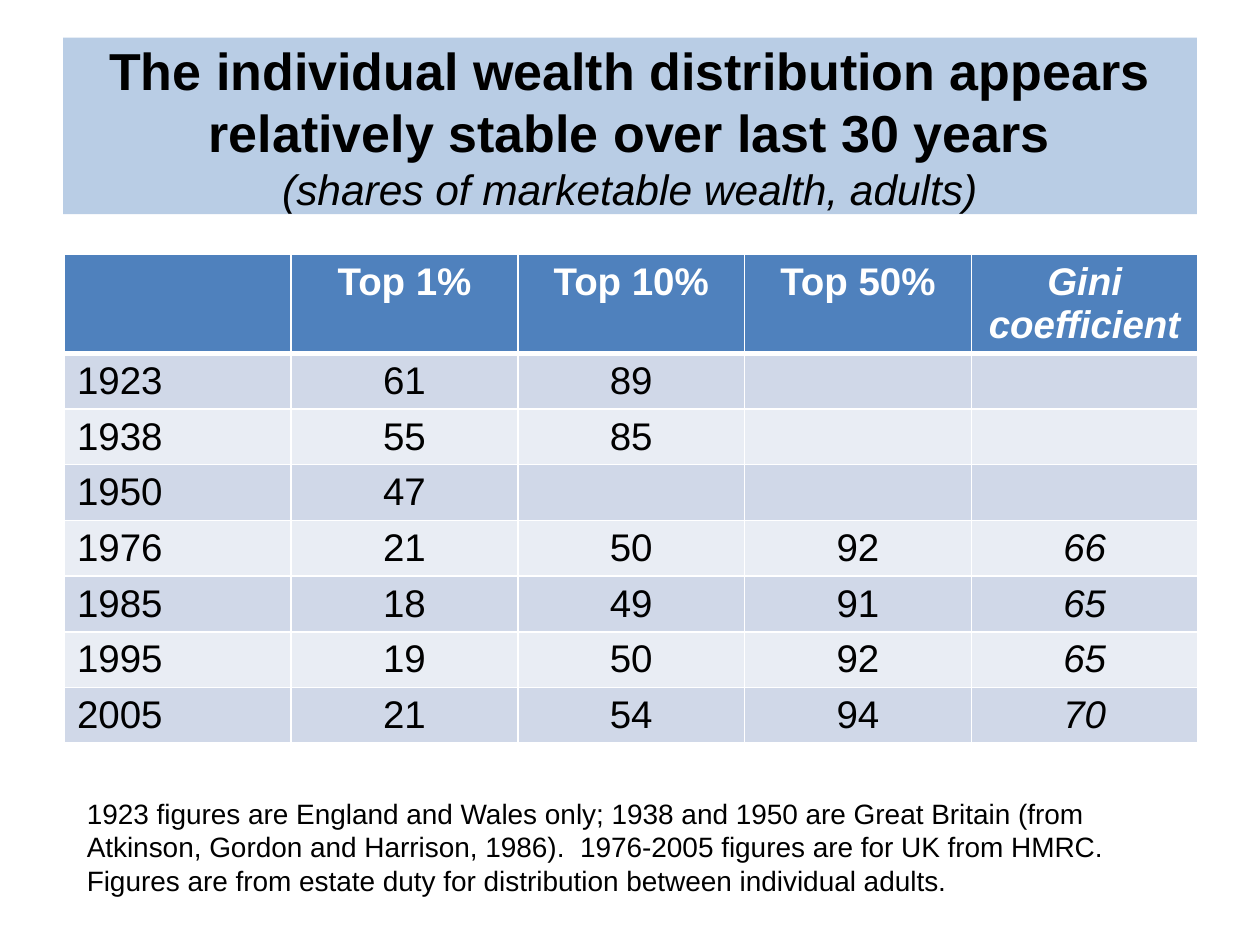
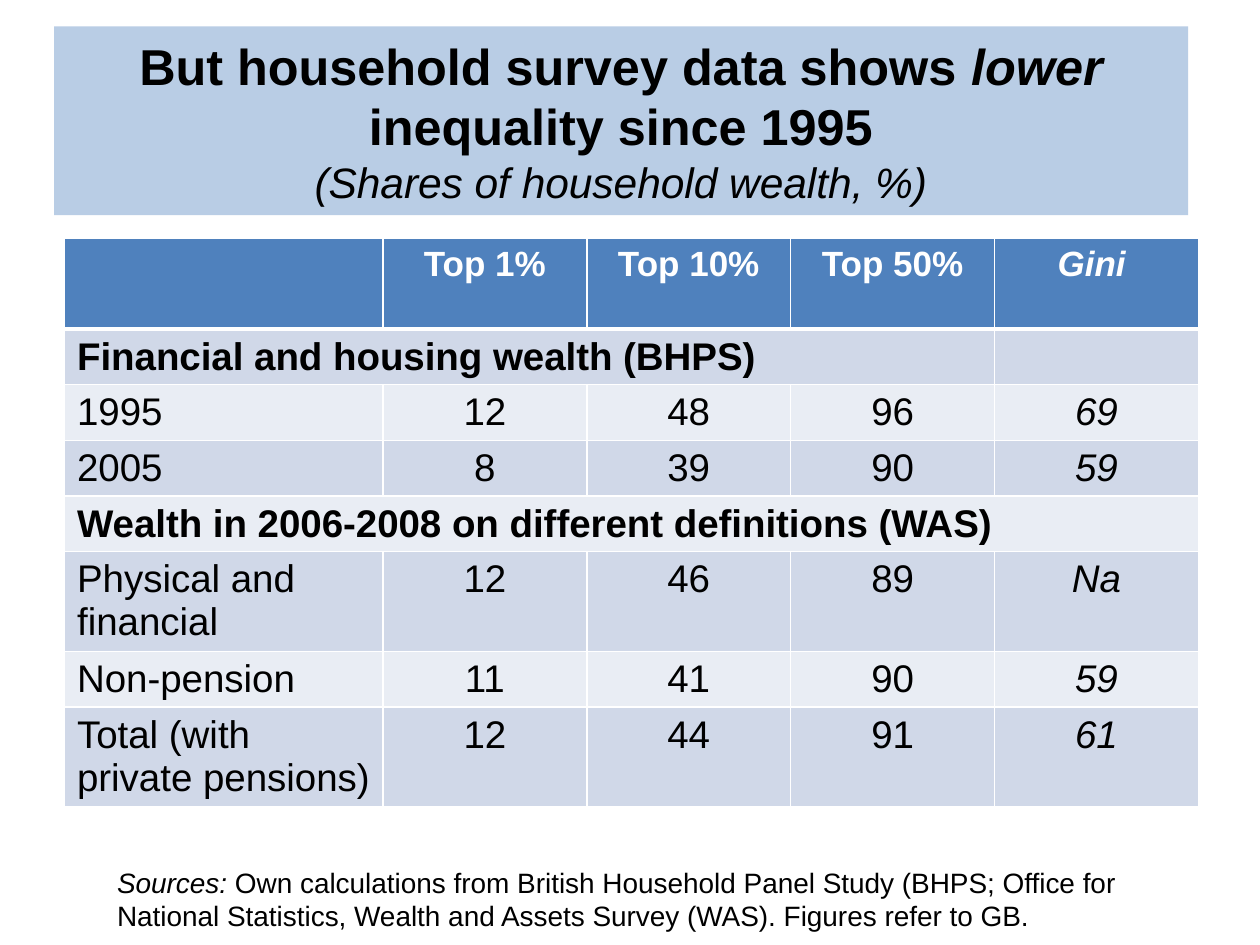
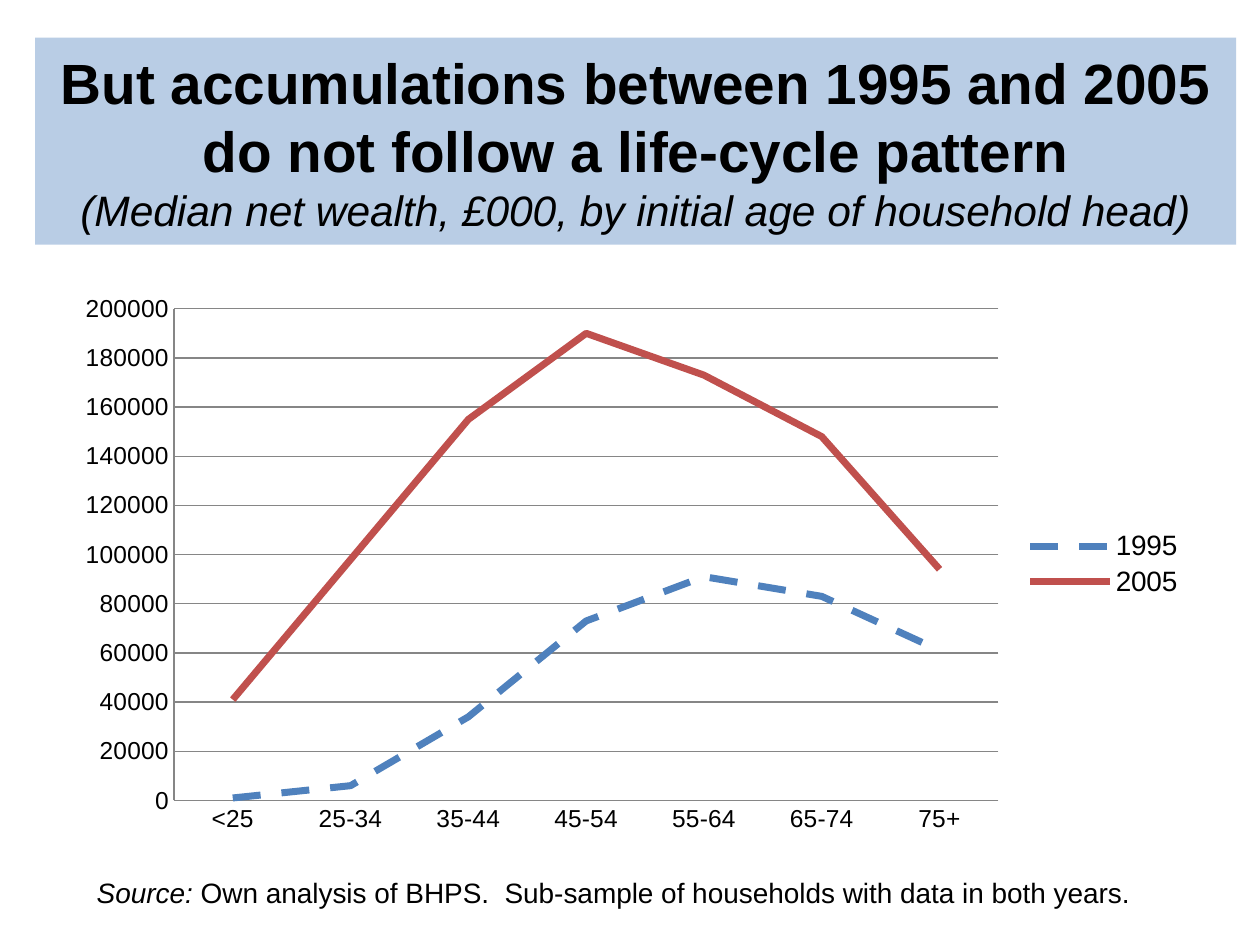
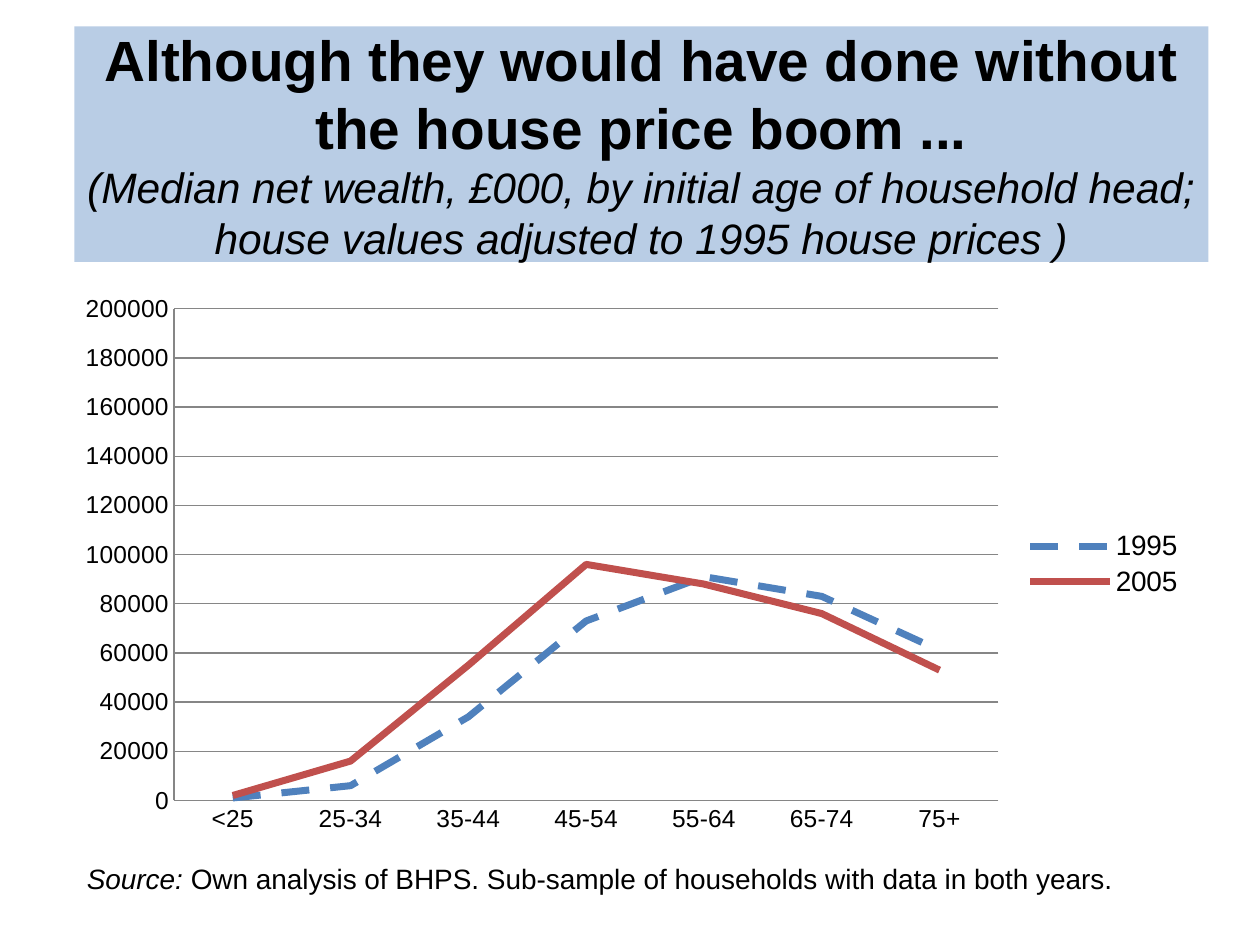
import pptx
import pptx.chart.data
import pptx.dml.color
import pptx.enum.chart
import pptx.enum.dml
import pptx.enum.text
import pptx.oxml
import pptx.oxml.ns
import pptx.util

Cm = pptx.util.Cm
Pt = pptx.util.Pt
Align = pptx.enum.text.PP_ALIGN

FONT = "Arial"
COLORS = {"text": "000000", "white": "FFFFFF", "title band": "B9CDE5",
          "header": "4F81BD", "odd row": "D0D8E8", "even row": "E9EDF4",
          "grid": "868686", "1995": "4F81BD", "2005": "C0504D"}
SUBTITLE = {"size": 24.3, "bold": False, "italic": True}
ITALIC = {"italic": True}

AGES = ["<25", "25-34", "35-44", "45-54", "55-64", "65-74", "75+"]
WEALTH_1995 = [1000, 6000, 34000, 73000, 91000, 83000, 61000]
CHART_BOX = (1.27, 5.72, 22.86, 11.3)

# Boxes are left, top, width, height in centimetres; runs are text or (text, format).
SLIDES = [
    {"title": ["The individual wealth distribution appears relatively stable over last 30 years\n",
               ("(shares of marketable wealth, adults)", SUBTITLE)],
     "title box": (1.27, 0.76, 22.86, 3.56), "title size": 29.7,
     "table": {
         "place": (1.3, 5.13), "header size": 22,
         "columns": [4.57] * 5, "rows": [1.97] + [1.12] * 7,
         "cells": [["", "Top 1%", "Top 10%", "Top 50%", "Gini coefficient"],
                   ["1923", "61", "89", "", ""],
                   ["1938", "55", "85", "", ""],
                   ["1950", "47", "", "", ""],
                   ["1976", "21", "50", "92", "66"],
                   ["1985", "18", "49", "91", "65"],
                   ["1995", "19", "50", "92", "65"],
                   ["2005", "21", "54", "94", "70"]],
         "spans": {}},
     "note": ["1923 figures are England and Wales only; 1938 and 1950 are Great Britain "
              "(from Atkinson, Gordon and Harrison, 1986).  1976-2005 figures are for UK "
              "from HMRC.  Figures are from estate duty for distribution between "
              "individual adults."],
     "note box": (1.5, 15.93, 21.41, 2.31)},
    {"title": ["But household survey data shows ", ("lower", ITALIC),
               " inequality since 1995\n", ("(Shares of household wealth, %)", SUBTITLE)],
     "title box": (1.09, 0.53, 22.86, 3.81), "title size": 28.8,
     "table": {
         "place": (1.3, 4.8), "header size": 20,
         "columns": [6.42] + [4.11] * 4,
         "rows": [1.83, 1.12, 1.12, 1.12, 1.12, 2.01, 1.12, 2.01],
         "cells": [["", "Top 1%", "Top 10%", "Top 50%", "Gini "],
                   ["Financial and housing wealth (BHPS)", "", "", "", ""],
                   ["1995", "12", "48", "96", "69"],
                   ["2005", "8", "39", "90", "59"],
                   ["Wealth in 2006-2008 on different definitions (WAS)", "", "", "", ""],
                   ["Physical and financial", "12", "46", "89", "Na"],
                   ["Non-pension", "11", "41", "90", "59"],
                   ["Total (with private pensions)", "12", "44", "91", "61"]],
         "spans": {1: 4, 4: 5}},
     "note": [("Sources: ", ITALIC),
              "Own calculations from British Household Panel Study (BHPS; Office for National "
              "Statistics, Wealth and Assets Survey (WAS). Figures refer to GB."],
     "note box": (2.11, 17.32, 20.8, 1.63)},
    {"title": ["But accumulations between 1995 and 2005 do not follow a life-cycle pattern\n",
               ("(Median net wealth, £000, by initial age of household head)", SUBTITLE)],
     "title box": (0.71, 0.76, 24.21, 4.17), "title size": 32.4,
     "chart": {"1995": WEALTH_1995,
               "2005": [41000, 98000, 155000, 190000, 173000, 148000, 94000]},
     "note": [("Source: ", ITALIC),
              "Own analysis of BHPS.  Sub-sample of households with data in both years."],
     "note box": (1.7, 17.53, 21.79, 0.94)},
    {"title": ["Although they would have done without the house price boom ...\n",
               ("(Median net wealth, £000, by initial age of household head; "
                "house values adjusted to 1995 house prices )", SUBTITLE)],
     "title box": (1.5, 0.53, 22.86, 4.75), "title size": 32.4,
     "chart": {"1995": WEALTH_1995,
               "2005": [2000, 16000, 55000, 96000, 88000, 76000, 53000]},
     "note": [("Source: ", ITALIC),
              "Own analysis of BHPS. Sub-sample of households with data in both years."],
     "note box": (1.5, 17.25, 22.4, 0.94)},
]


def rgb(name):
    return pptx.dml.color.RGBColor.from_string(COLORS[name])


def box(lengths):
    return [Cm(length) for length in lengths]


def set_font(font, size, color="text", bold=False, italic=False):
    font.name = FONT
    font.size = Pt(size)
    font.bold = bold
    font.italic = italic
    font.color.rgb = rgb(color)


def write(frame, runs, align=Align.LEFT, **style):
    """Fill the first paragraph; a run's own format overrides the shared style."""
    frame.word_wrap = True
    paragraph = frame.paragraphs[0]
    paragraph.alignment = align
    for item in runs:
        text, changes = item if isinstance(item, tuple) else (item, {})
        run = paragraph.add_run()
        run.text = text.rstrip("\n")
        set_font(run.font, **{**style, **changes})
        if text.endswith("\n"):
            paragraph.add_line_break()


def add_title(slide, runs, place, size):
    title = slide.shapes.title
    title.left, title.top, title.width, title.height = box(place)
    title.fill.solid()
    title.fill.fore_color.rgb = rgb("title band")
    frame = title.text_frame
    frame.auto_size = pptx.enum.text.MSO_AUTO_SIZE.NONE
    frame.vertical_anchor = pptx.enum.text.MSO_ANCHOR.MIDDLE
    write(frame, runs, align=Align.CENTER, size=size, bold=True)


def add_note(slide, runs, place):
    frame = slide.shapes.add_textbox(*box(place)).text_frame
    write(frame, runs, size=16)


def set_borders(cell, **widths):
    """Draw white cell borders of the given widths in points, before the cell's fill."""
    properties = cell._tc.get_or_add_tcPr()
    for index, (side, width) in enumerate(widths.items()):
        properties.insert(index, pptx.oxml.parse_xml(
            f'<a:{side} {pptx.oxml.ns.nsdecls("a")} w="{Pt(width)}"><a:solidFill>'
            f'<a:srgbClr val="{COLORS["white"]}"/></a:solidFill></a:{side}>'))


def add_table(slide, content):
    cells, columns, rows = content["cells"], content["columns"], content["rows"]
    place = box((*content["place"], sum(columns), sum(rows)))
    table = slide.shapes.add_table(len(rows), len(columns), *place).table
    for column, width in zip(table.columns, columns):
        column.width = Cm(width)
    for row, height in zip(table.rows, rows):
        row.height = Cm(height)
    for r, texts in enumerate(cells):
        header = r == 0
        fill = "header" if header else "odd row" if r % 2 else "even row"
        for c, text in enumerate(texts):
            cell = table.cell(r, c)
            cell.fill.solid()
            cell.fill.fore_color.rgb = rgb(fill)
            set_borders(cell, lnL=1, lnR=1, lnT=3 if r == 1 else 1, lnB=3 if header else 1)
            if text:
                write(cell.text_frame, [text],
                      align=Align.CENTER if c else Align.LEFT,
                      size=content["header size"] if header else 22,
                      color="white" if header else "text",
                      bold=header or r in content["spans"],
                      italic=c == len(columns) - 1)
    for r, span in content["spans"].items():
        table.cell(r, 0).merge(table.cell(r, span - 1))


def add_chart(slide, series_values):
    data = pptx.chart.data.CategoryChartData(number_format="0")
    data.categories = AGES
    for name, values in series_values.items():
        data.add_series(name, values)
    chart = slide.shapes.add_chart(
        pptx.enum.chart.XL_CHART_TYPE.LINE, *box(CHART_BOX), data).chart
    set_font(chart.font, 10)
    chart.has_title = False
    chart.has_legend = True
    chart.legend.position = pptx.enum.chart.XL_LEGEND_POSITION.RIGHT
    chart.legend.include_in_layout = False
    set_font(chart.legend.font, 16)

    value_axis = chart.value_axis
    value_axis.minimum_scale = 0
    value_axis.maximum_scale = 200000
    value_axis.major_unit = 20000
    value_axis.has_major_gridlines = True
    value_axis.tick_labels.number_format = "0"
    value_axis.tick_labels.number_format_is_linked = False
    for axis in (chart.category_axis, value_axis):
        axis.major_tick_mark = pptx.enum.chart.XL_TICK_MARK.NONE
        set_font(axis.tick_labels.font, 14)
    for ruled in (chart.category_axis, value_axis, value_axis.major_gridlines):
        ruled.format.line.color.rgb = rgb("grid")
        ruled.format.line.width = Pt(0.75)

    chart.plots[0].vary_by_categories = False
    for series in chart.plots[0].series:
        series.smooth = False
        series.marker.style = pptx.enum.chart.XL_MARKER_STYLE.NONE
        series.format.line.color.rgb = rgb(series.name)
        series.format.line.width = Pt(4)
        if series.name == "1995":
            series.format.line.dash_style = pptx.enum.dml.MSO_LINE.DASH


def main():
    presentation = pptx.Presentation()
    presentation.slide_width, presentation.slide_height = Cm(25.4), Cm(19.05)
    title_only = presentation.slide_layouts[5]
    for content in SLIDES:
        slide = presentation.slides.add_slide(title_only)
        add_title(slide, content["title"], content["title box"], content["title size"])
        if "table" in content:
            add_table(slide, content["table"])
        else:
            add_chart(slide, content["chart"])
        add_note(slide, content["note"], content["note box"])
    presentation.save("out.pptx")


if __name__ == "__main__":
    main()
